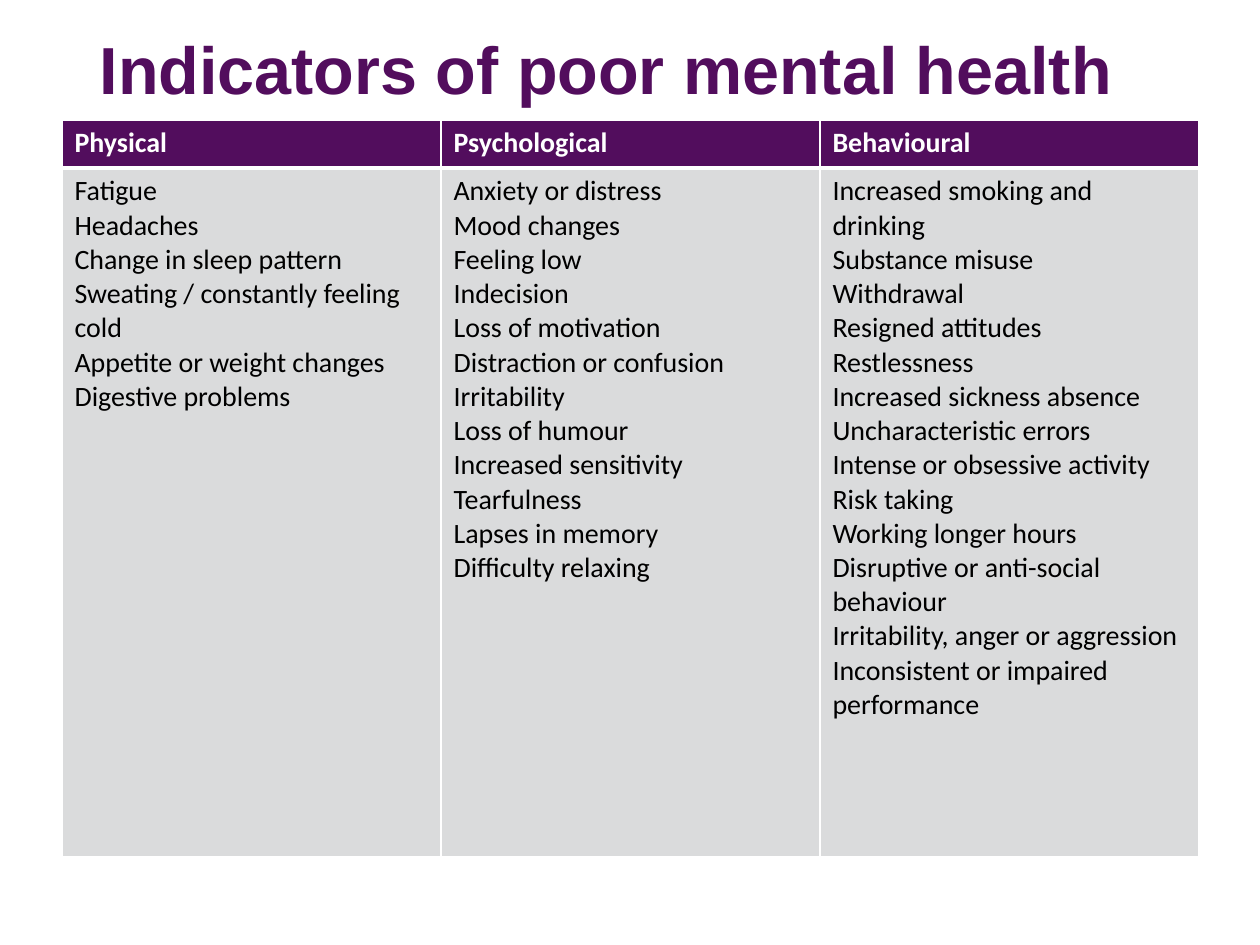
from pptx import Presentation
from pptx.dml.color import RGBColor
from pptx.enum.text import MSO_ANCHOR, MSO_AUTO_SIZE, PP_ALIGN
from pptx.oxml.ns import qn
from pptx.util import Emu, Pt
from lxml import etree

PX = 914400 // 126
LEFT = PP_ALIGN.LEFT
MIDDLE = MSO_ANCHOR.MIDDLE
NO_AUTOFIT = MSO_AUTO_SIZE.NONE
TITLE_ONLY = 5

PURPLE = RGBColor(0x52, 0x0D, 0x5D)
GREY = RGBColor(0xDA, 0xDB, 0xDC)
WHITE = RGBColor(0xFF, 0xFF, 0xFF)
BLACK = RGBColor(0x00, 0x00, 0x00)

COLUMN_WIDTH = 379
HEADER_HEIGHT, BODY_HEIGHT = 48, 689
INDICATORS = {
    "Physical": [
        "Fatigue",
        "Headaches",
        "Change in sleep pattern",
        "Sweating / constantly feeling cold",
        "Appetite or weight changes",
        "Digestive problems",
    ],
    "Psychological": [
        "Anxiety or distress",
        "Mood changes",
        "Feeling low",
        "Indecision",
        "Loss of motivation",
        "Distraction or confusion",
        "Irritability",
        "Loss of humour",
        "Increased sensitivity",
        "Tearfulness",
        "Lapses in memory",
        "Difficulty relaxing",
    ],
    "Behavioural": [
        "Increased smoking and drinking",
        "Substance misuse",
        "Withdrawal",
        "Resigned attitudes",
        "Restlessness",
        "Increased sickness absence",
        "Uncharacteristic errors",
        "Intense or obsessive activity",
        "Risk taking",
        "Working longer hours",
        "Disruptive or anti-social behaviour",
        "Irritability, anger or aggression",
        "Inconsistent or impaired performance",
    ],
}


def px(n):
    return Emu(n * PX)


def write(tf, lines, font="Calibri", size=16, color=BLACK, bold=False, spacing=None):
    """Fill a text frame with one left-aligned paragraph per line."""
    for i, line in enumerate(lines):
        p = tf.paragraphs[0] if i == 0 else tf.add_paragraph()
        p.alignment = LEFT
        p.line_spacing = spacing
        r = p.add_run()
        r.text = line
        r.font.name = font
        r.font.size = Pt(size)
        r.font.color.rgb = color
        r.font.bold = bold


def set_borders(cell, color=WHITE, top=1, bottom=1):
    """Draw the four cell borders, with widths in points; call before the fill."""
    tcPr = cell._tc.get_or_add_tcPr()
    for side, width in (("L", 1), ("R", 1), ("T", top), ("B", bottom)):
        ln = etree.SubElement(tcPr, qn(f"a:ln{side}"), w=str(Pt(width)))
        fill = etree.SubElement(ln, qn("a:solidFill"))
        etree.SubElement(fill, qn("a:srgbClr"), val=str(color))


def fill_cell(cell, lines, fill, top=1, bottom=1, **text_format):
    set_borders(cell, top=top, bottom=bottom)
    cell.fill.solid()
    cell.fill.fore_color.rgb = fill
    write(cell.text_frame, lines, **text_format)


def add_title(slide, text):
    sp = slide.shapes.title
    sp.left, sp.top, sp.width, sp.height = px(87), px(26), px(1086), px(93)
    tf = sp.text_frame
    tf.auto_size = NO_AUTOFIT
    tf.vertical_anchor = MIDDLE
    write(tf, [text], font="Arial", size=38, color=PURPLE, bold=True, spacing=0.9)


def add_indicator_table(slide):
    n = len(INDICATORS)
    table = slide.shapes.add_table(
        2, n, px(62), px(120), px(n * COLUMN_WIDTH), px(HEADER_HEIGHT + BODY_HEIGHT)
    ).table
    table.rows[0].height = px(HEADER_HEIGHT)
    table.rows[1].height = px(BODY_HEIGHT)
    for col, (heading, items) in enumerate(INDICATORS.items()):
        table.columns[col].width = px(COLUMN_WIDTH)
        fill_cell(table.cell(0, col), [heading], PURPLE, bottom=3, color=WHITE, bold=True)
        fill_cell(table.cell(1, col), items, GREY, top=3)


def main():
    prs = Presentation()
    prs.slide_width, prs.slide_height = px(1260), px(945)
    slide = prs.slides.add_slide(prs.slide_layouts[TITLE_ONLY])
    add_title(slide, "Indicators of poor mental health")
    add_indicator_table(slide)
    prs.save("out.pptx")


if __name__ == "__main__":
    main()
